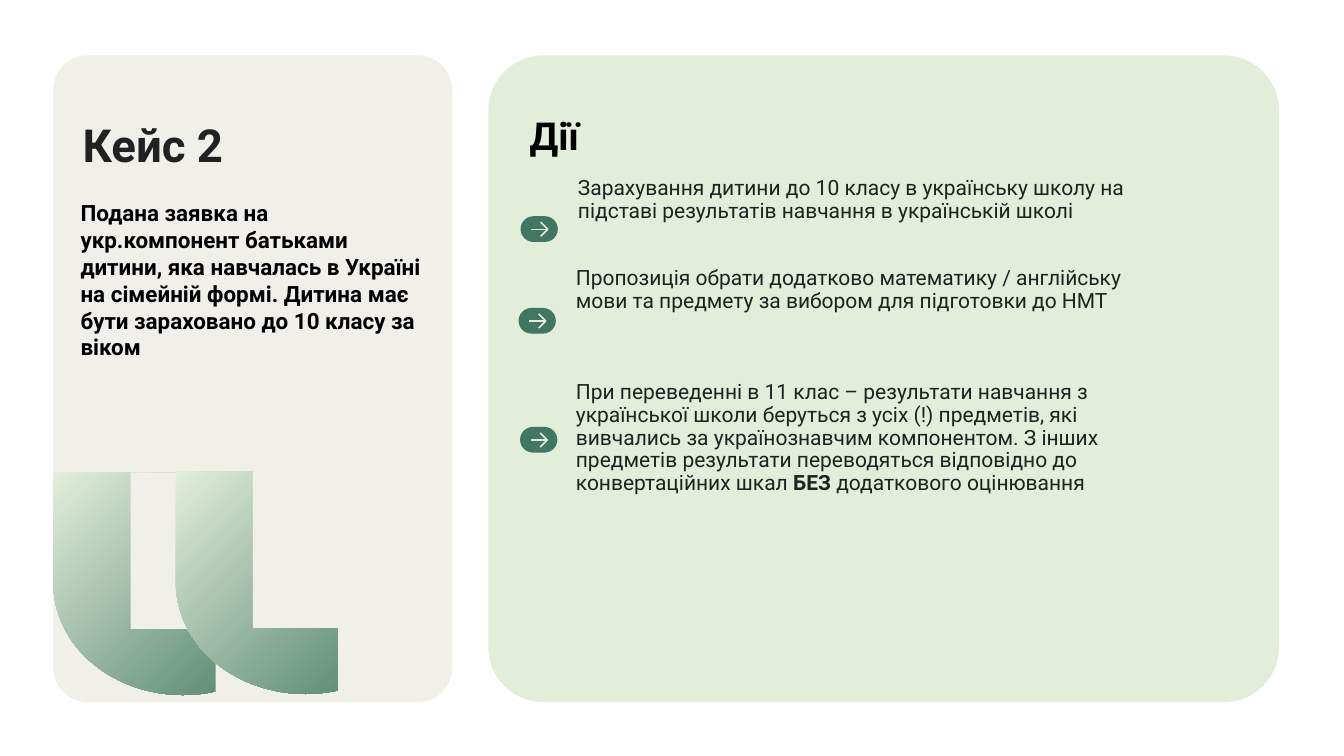
"""Build the "Кейс 2" slide: a case description beside its list of actions."""
from dataclasses import dataclass

from lxml import etree
from pptx import Presentation
from pptx.dml.color import RGBColor
from pptx.enum import shapes, text
from pptx.oxml import ns
from pptx.util import Inches, Pt


@dataclass(frozen=True)
class Theme:
    font: str = "Roboto"
    sand: str = "F0EFEA"
    mint: str = "E2EEDA"
    green: str = "417662"
    ink: str = "202122"
    black: str = "000000"
    title: int = 65
    heading: int = 55
    case: int = 32
    action: int = 30
    arrow_line: float = 2.25


theme = Theme()


def add_block(parent, kind, box, color=None, corner=None):
    block = parent.shapes.add_shape(kind, *map(Inches, box))
    block.shadow.inherit = False
    block.line.fill.background()
    if color:
        block.fill.solid()
        block.fill.fore_color.rgb = RGBColor.from_string(color)
    if corner is not None:
        block.adjustments[0] = corner
    return block


def write_text(holder, *parts, size, color, bold=False, inset=0.1, spacing=None,
               before=None, anchor=text.MSO_ANCHOR.TOP,
               fit=text.MSO_AUTO_SIZE.SHAPE_TO_FIT_TEXT):
    frame = holder.text_frame
    frame.word_wrap = True
    frame.auto_size = fit
    frame.vertical_anchor = anchor
    frame.margin_left = frame.margin_right = Inches(inset)
    frame.margin_top = frame.margin_bottom = Inches(inset)
    paragraph = frame.paragraphs[0]
    paragraph.alignment = text.PP_ALIGN.LEFT
    if spacing:
        paragraph.line_spacing = spacing
    if before:
        paragraph.space_before = Pt(before)
    for index, part in enumerate(parts):
        run = paragraph.add_run()
        run.text = part
        run.font.name = theme.font
        run.font.size = Pt(size)
        run.font.bold = bold or index % 2 == 1
        run.font.color.rgb = RGBColor.from_string(color)


deck = Presentation()
deck.slide_width, deck.slide_height = Inches(26.67), Inches(15)
slide = deck.slides.add_slide(deck.slide_layouts[5])
rounded = shapes.MSO_SHAPE.ROUNDED_RECTANGLE

add_block(slide, rounded, (1.06, 1.1, 7.91, 12.83), theme.sand, 0.085)
case = slide.shapes.add_textbox(*map(Inches, (1.5, 3.85, 6.96, 3.43)))
write_text(case, "Подана заявка на укр.компонент батьками дитини, яка навчалась в Україні "
           "на сімейній формі. Дитина має бути зараховано до 10 класу за віком",
           size=theme.case, color=theme.black, bold=True)

title = slide.shapes.title
title.left, title.top, title.width, title.height = map(Inches, (1.58, 1.59, 7.31, 2.73))
write_text(title, "Кейс 2", size=theme.title, color=theme.ink, bold=True, inset=0.06,
           spacing=0.8, anchor=text.MSO_ANCHOR.MIDDLE, fit=text.MSO_AUTO_SIZE.NONE)
case.element.addnext(title.element)

quote_marks = [
    ((1.42, 9.01), [(2.59, 9.37, 2.26, 3.11), (4.28, 9.37, 2, 4.47)]),
    ((3.85, 8.99), [(5.02, 9.2, 3.73, 3.26), (6.71, 9.34, 2, 4.47)]),
]
for corner, cutouts in quote_marks:
    quote = slide.shapes.add_group_shape()
    curve = add_block(quote, shapes.MSO_SHAPE.FLOWCHART_DELAY, (*corner, 4.42, 5.14))
    curve.rotation = 90
    curve.fill.gradient()
    curve.fill.gradient_angle = 45
    for stop, position, color in zip(curve.fill.gradient_stops, (0, 1), (theme.mint, theme.green)):
        stop.position = position
        stop.color.rgb = RGBColor.from_string(color)
    for cutout in cutouts:
        add_block(quote, shapes.MSO_SHAPE.RECTANGLE, cutout, theme.sand)

add_block(slide, rounded, (9.69, 1.1, 15.69, 12.83), theme.mint, 0.085)
heading = slide.shapes.add_textbox(*map(Inches, (10.41, 2.13, 6.96, 1.13)))
write_text(heading, "Дії", size=theme.heading, color=theme.black, bold=True)

actions = [
    ((10.33, 4.29), (11.37, 3.42, 12.15, 1.11),
     ["Зарахування дитини до 10 класу в українську школу на підставі "
      "результатів навчання в українській школі"]),
    ((10.29, 6.11), (11.33, 5.21, 11.79, 1.11),
     ["Пропозиція обрати додатково математику / англійську мови та предмету "
      "за вибором для підготовки до НМТ"]),
    ((10.32, 8.47), (11.33, 7.47, 11.84, 2.47),
     ["При переведенні в 11 клас – результати навчання з української школи беруться "
      "з усіх (!) предметів, які вивчались за українознавчим компонентом. З інших "
      "предметів результати переводяться відповідно до конвертаційних шкал ",
      "БЕЗ", " додаткового оцінювання"]),
]
for (left, top), box, parts in actions:
    marker = slide.shapes.add_group_shape()
    add_block(marker, rounded, (left, top, 0.74, 0.51), theme.green, 0.5)
    tip_x, tip_y = left + 0.54, top + 0.26
    for back, rise in ((0.14, -0.14), (0.14, 0.14), (0.33, 0)):
        stroke = marker.shapes.add_connector(
            shapes.MSO_CONNECTOR.STRAIGHT,
            *map(Inches, (tip_x - back, tip_y + rise, tip_x, tip_y)))
        stroke.line.color.rgb = RGBColor.from_string(theme.mint)
        stroke.line.width = Pt(theme.arrow_line)
        etree.SubElement(stroke.element.spPr, ns.qn("a:effectLst"))
    action = slide.shapes.add_textbox(*map(Inches, box))
    write_text(action, *parts, size=theme.action, color=theme.ink, spacing=0.9, before=45)

deck.save("out.pptx")
